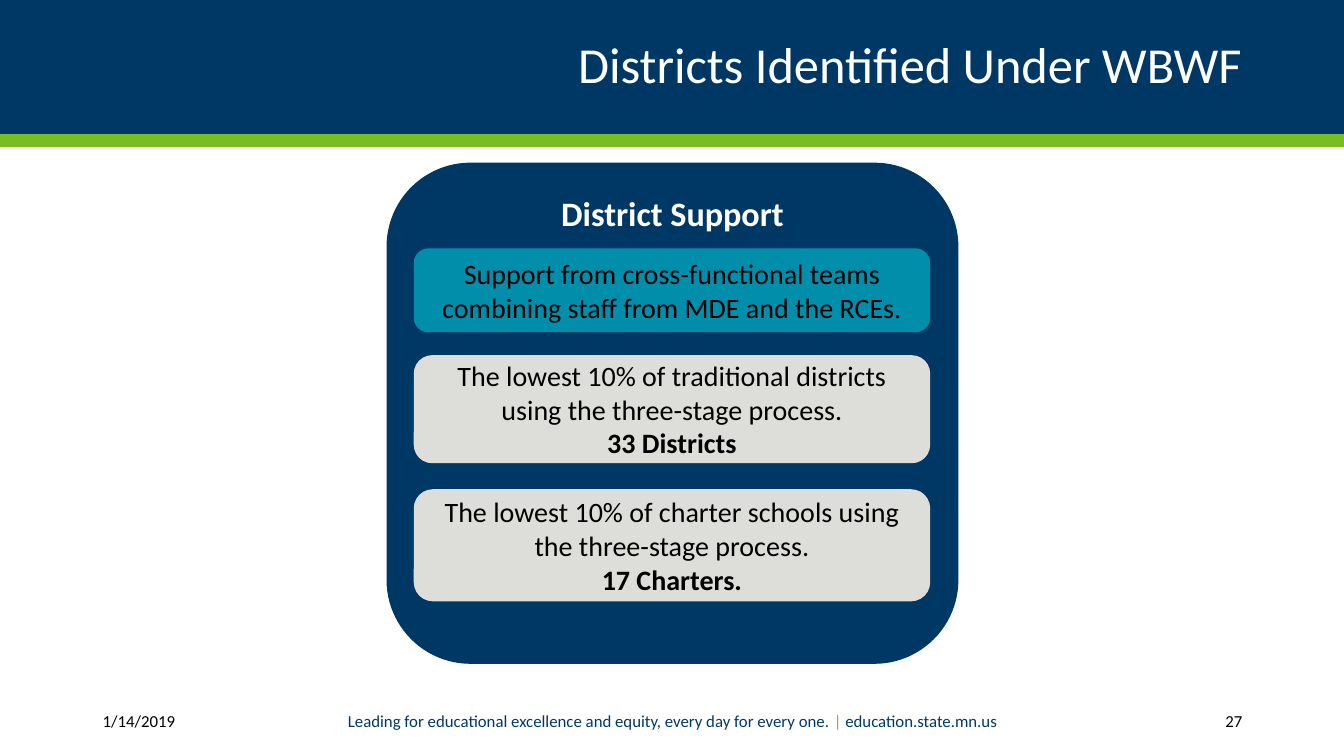
from dataclasses import dataclass

import pptx
import pptx.dml.color
import pptx.enum.shapes
import pptx.enum.text
import pptx.util

Inches = pptx.util.Inches
RGBColor = pptx.dml.color.RGBColor
Align = pptx.enum.text.PP_ALIGN
Anchor = pptx.enum.text.MSO_ANCHOR
Preset = pptx.enum.shapes.MSO_SHAPE

NAVY = RGBColor(0x00, 0x38, 0x65)
GREEN = RGBColor(0x78, 0xBE, 0x21)
TEAL = RGBColor(0x00, 0x8E, 0xAA)
GRAY = RGBColor(0xDD, 0xDD, 0xDA)
WHITE = RGBColor(0xFF, 0xFF, 0xFF)
BLACK = RGBColor(0x00, 0x00, 0x00)

SLIDE_WIDTH = 13.33
FOOTER_TOP, FOOTER_HEIGHT = 6.95, 0.4
CARD_LEFT, CARD_WIDTH = 4.11, 5.11


@dataclass(frozen=True)
class Run:
    text: str
    color: RGBColor = BLACK
    bold: bool = False


@dataclass(frozen=True)
class Card:
    top: float
    height: float
    fill: RGBColor
    paragraphs: list[list[Run]]


@dataclass(frozen=True)
class FooterPart:
    left: float
    width: float
    align: Align
    runs: list[Run]


CARDS = [
    Card(2.47, 0.82, TEAL, [
        [Run("Support from cross-functional teams combining staff from MDE and the RCEs.")],
    ]),
    Card(3.53, 1.06, GRAY, [
        [Run("The lowest 10% of traditional districts using the three-stage process.")],
        [Run("33 Districts", bold=True)],
    ]),
    Card(4.86, 1.1, GRAY, [
        [Run("The lowest 10% of charter schools using the three-stage process.")],
        [Run("17 Charters.", bold=True)],
    ]),
]

FOOTER = [
    FooterPart(0.92, 1.49, Align.LEFT, [Run("1/14/2019")]),
    FooterPart(3.16, 7.02, Align.CENTER, [
        Run("Leading for educational excellence and equity, every day for every one. ", NAVY),
        Run("| ", GREEN),
        Run("education.state.mn.us", NAVY),
    ]),
    FooterPart(10.82, 1.6, Align.RIGHT, [Run("27")]),
]


def write(shape, paragraphs: list[list[Run]], *, size: float,
          align: Align = Align.CENTER, anchor: Anchor = Anchor.MIDDLE,
          line_spacing: float = 1.0) -> None:
    frame = shape.text_frame
    frame.word_wrap = True
    frame.auto_size = pptx.enum.text.MSO_AUTO_SIZE.NONE
    frame.vertical_anchor = anchor
    for index, parts in enumerate(paragraphs):
        paragraph = frame.add_paragraph() if index else frame.paragraphs[0]
        paragraph.alignment = align
        paragraph.line_spacing = line_spacing
        for part in parts:
            run = paragraph.add_run()
            run.text = part.text
            run.font.name = "Calibri"
            run.font.size = pptx.util.Pt(size)
            run.font.bold = part.bold
            run.font.color.rgb = part.color


def add_block(slide, preset: Preset, left: float, top: float,
              width: float, height: float, fill: RGBColor):
    block = slide.shapes.add_shape(
        preset, Inches(left), Inches(top), Inches(width), Inches(height))
    block.shadow.inherit = False
    block.fill.solid()
    block.fill.fore_color.rgb = fill
    if preset == Preset.RECTANGLE:
        block.line.fill.background()
    else:
        block.line.color.rgb = fill
        block.line.width = pptx.util.Pt(0.85)
    return block


def add_header(slide) -> None:
    add_block(slide, Preset.RECTANGLE, 0, 0, SLIDE_WIDTH, 1.33, NAVY)
    add_block(slide, Preset.RECTANGLE, 0, 1.33, SLIDE_WIDTH, 0.13, GREEN)
    title = slide.shapes.title
    title.left, title.top = Inches(0.92), Inches(0.17)
    title.width, title.height = Inches(11.5), Inches(1)
    write(title, [[Run("Districts Identified Under WBWF", WHITE)]],
          size=36, align=Align.RIGHT, line_spacing=0.9)
    # The title has to lie above the navy band.
    slide.shapes._spTree.append(title._element)


def add_footer(slide) -> None:
    for part in FOOTER:
        box = slide.shapes.add_textbox(
            Inches(part.left), Inches(FOOTER_TOP),
            Inches(part.width), Inches(FOOTER_HEIGHT))
        write(box, [part.runs], size=12, align=part.align)


def add_district_support(slide) -> None:
    panel = add_block(slide, Preset.ROUNDED_RECTANGLE, 3.84, 1.62, 5.66, 4.96, NAVY)
    write(panel, [[Run("District Support", WHITE, bold=True)]],
          size=24.4, anchor=Anchor.TOP)
    for card in CARDS:
        block = add_block(slide, Preset.ROUNDED_RECTANGLE, CARD_LEFT, card.top,
                          CARD_WIDTH, card.height, card.fill)
        write(block, card.paragraphs, size=20)


def main() -> None:
    deck = pptx.Presentation()
    deck.slide_width, deck.slide_height = Inches(SLIDE_WIDTH), Inches(7.5)
    slide = deck.slides.add_slide(deck.slide_layouts.get_by_name("Title Only"))
    add_header(slide)
    add_footer(slide)
    add_district_support(slide)
    deck.save("out.pptx")


if __name__ == "__main__":
    main()
